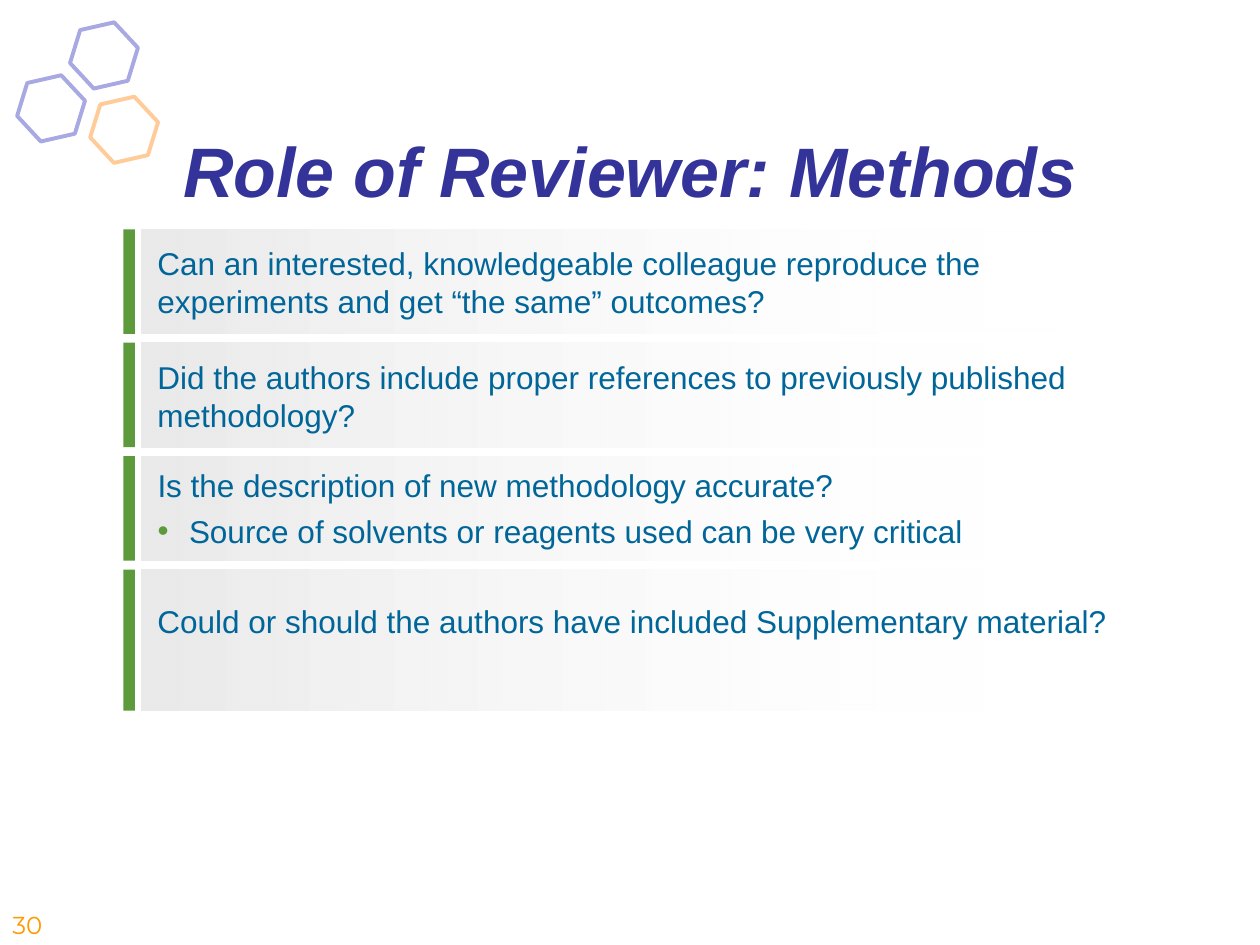
from lxml.etree import SubElement
from pptx import Presentation
from pptx.dml.color import RGBColor
from pptx.enum.shapes import MSO_SHAPE
from pptx.enum.text import MSO_ANCHOR, PP_ALIGN
from pptx.oxml.ns import qn
from pptx.util import Inches, Pt

GREEN = "5D9A3C"
BLUE = "006699"
INDENT = 0.25


def color(hex_string):
    return RGBColor.from_string(hex_string)


class SlideBuilder:
    def __init__(self, slide, font_name="Arial"):
        self.slide = slide
        self.font_name = font_name

    def box(self, left, top, width, height):
        return [Inches(value) for value in (left, top, width, height)]

    def hexagon(self, left, top, line_color):
        shape = self.slide.shapes.add_shape(
            MSO_SHAPE.HEXAGON, *self.box(left, top, 0.55, 0.48))
        shape.adjustments[0] = 0.288
        shape.rotation = 107.1
        shape.shadow.inherit = False
        shape.fill.background()
        shape.line.color.rgb = color(line_color)
        shape.line.width = Pt(2.25)

    def rectangle(self, shapes, left, top, width, height):
        shape = shapes.add_shape(
            MSO_SHAPE.RECTANGLE, *self.box(left, top, width, height))
        shape.shadow.inherit = False
        shape.line.fill.background()
        return shape

    def solid_bar(self, shapes, *place):
        fill = self.rectangle(shapes, *place).fill
        fill.solid()
        fill.fore_color.rgb = color(GREEN)

    def fading_panel(self, shapes, *place):
        shape = self.rectangle(shapes, *place)
        shape.fill.gradient()
        shape.fill.gradient_angle = 0
        for stop, hex_string in zip(shape.fill.gradient_stops, ("EAEAEA", "FFFFFF")):
            stop.color.rgb = color(hex_string)
        # The right end is fully transparent
        end_color = list(shape._element.iter(qn("a:srgbClr")))[-1]
        SubElement(end_color, qn("a:alpha"), val="0")

    def text_box(self, shapes, *place, margin=None):
        frame = shapes.add_textbox(*self.box(*place)).text_frame
        frame.word_wrap = True
        if margin is not None:
            frame.margin_left = frame.margin_right = Inches(margin)
            frame.margin_top = frame.margin_bottom = Inches(margin)
        return frame

    def add_run(self, paragraph, text, size, hex_string, font_name=None):
        run = paragraph.add_run()
        run.text = text
        run.font.name = font_name or self.font_name
        run.font.size = Pt(size)
        run.font.color.rgb = color(hex_string)
        return run

    def bullet(self, paragraph):
        properties = paragraph._p.get_or_add_pPr()
        properties.set("marL", str(Inches(INDENT)))
        properties.set("indent", str(-Inches(INDENT)))
        bullet_color = SubElement(properties, qn("a:buClr"))
        SubElement(bullet_color, qn("a:srgbClr"), val=GREEN)
        SubElement(properties, qn("a:buFont"), typeface=self.font_name)
        SubElement(properties, qn("a:buChar"), char="•")
        paragraph.space_before = Pt(4.5)

    def question(self, top, height, text_place, question, detail=None):
        shapes = self.slide.shapes.add_group_shape().shapes
        self.solid_bar(shapes, 0.98, top, 0.09, height)
        self.fading_panel(shapes, 1.12, top, 7.35, height)
        text_top, text_width, text_height = text_place
        frame = self.text_box(shapes, 1.25, text_top, text_width, text_height, margin=0)
        self.add_run(frame.paragraphs[0], question, 18, BLUE)
        if detail:
            paragraph = frame.add_paragraph()
            self.bullet(paragraph)
            self.add_run(paragraph, detail, 18, BLUE)


def main():
    presentation = Presentation()
    presentation.slide_width = Inches(10)
    presentation.slide_height = Inches(7.5)
    slide = presentation.slides.add_slide(presentation.slide_layouts[6])
    builder = SlideBuilder(slide)

    # Corner decoration
    for left, top, line_color in ((0.55, 0.2, "A8A8E2"), (0.13, 0.62, "A8A8E2"),
                                  (0.71, 0.79, "FFCC99")):
        builder.hexagon(left, top, line_color)

    # Title
    title = builder.text_box(slide.shapes, 0.5, 0.91, 9, 0.87)
    title.vertical_anchor = MSO_ANCHOR.MIDDLE
    title.paragraphs[0].alignment = PP_ALIGN.CENTER
    run = builder.add_run(title.paragraphs[0], "Role of Reviewer: Methods", 40, "333399")
    run.font.bold = run.font.italic = True

    # Slide number
    number = builder.text_box(slide.shapes, 0, 7.17, 0.67, 0.33)
    builder.add_run(number.paragraphs[0], "30", 14, "FF9900", "Montserrat")

    # Questions: panel height, text (top, width, height), wording
    questions = (
        (0.83, (1.94, 7.67, 0.6), "Can an interested, knowledgeable colleague "
         "reproduce the experiments and get “the same” outcomes?"),
        (0.83, (2.84, 8, 0.6), "Did the authors include proper references to "
         "previously published methodology?"),
        (0.83, (3.7, 7.18, 0.68), "Is the description of new methodology accurate?",
         "Source of solvents or reagents used can be very critical"),
        (1.12, (4.78, 8, 0.3), "Could or should the authors have included "
         "Supplementary material?"),
    )
    for index, (height, text_place, *wording) in enumerate(questions):
        builder.question(1.82 + 0.9 * index, height, text_place, *wording)

    presentation.save("out.pptx")


if __name__ == "__main__":
    main()
